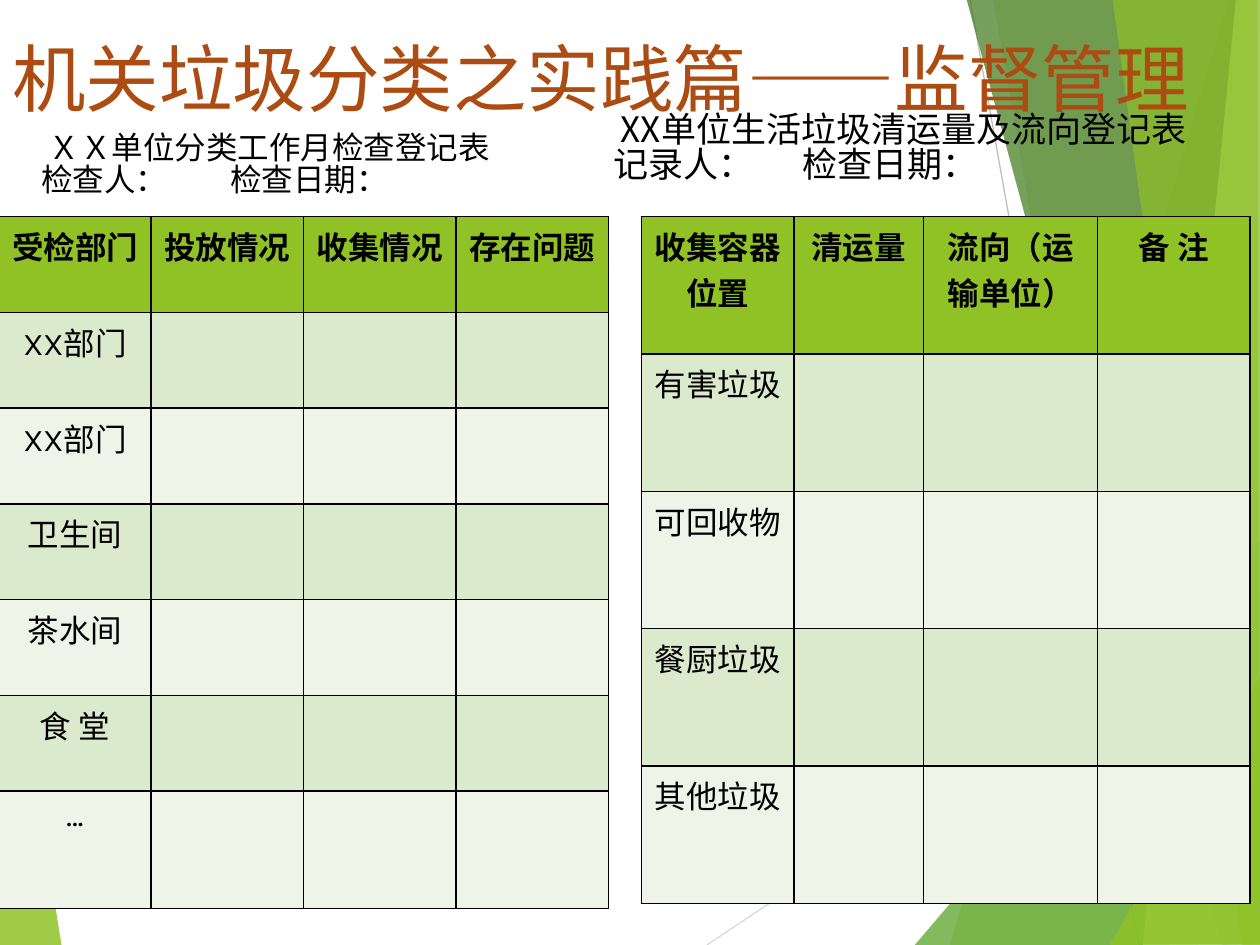
"""Build the waste-sorting supervision slide with two registration tables."""
import pptx
import pptx.dml.color
import pptx.enum.shapes
import pptx.enum.text
import pptx.oxml
import pptx.util
from lxml import etree
from pptx.util import Inches, Pt

BLACK, GREEN = "000000", "90C226"
BANDS = ["DBE9CD", "EEF4E8"]
BODY_FONT = "Noto Sans CJK SC"

LEFT_CORNER = ([(-0.01, 4.39), (0.49, 7.51), (-0.01, 7.5)], GREEN, 85)
RAYS = [
    ((5.61, 7.5), (10.01, 4.57), "D9D9D9"),
    ((7.7, 0), (9.04, 7.5), "BFBFBF"),
]
FACETS = [
    ([(9.75, 0), (7.54, 7.5), (10.02, 7.51), (10.01, 0.01)], GREEN, 30),
    ([(7.88, -0.01), (9.19, 7.5), (10.01, 7.5), (10.01, -0.01)], GREEN, 20),
    ([(7.26, 7.5), (10, 4.29), (10.01, 7.5)], "54A021", 72),
    ([(7.67, -0.01), (9.7, 7.5), (10.01, 7.49), (10.01, -0.01)], "3F7819", 70),
    ([(9.81, -0.01), (9.07, 7.5), (10.01, 7.5), (10, -0.01)], "C0E474", 70),
    ([(8.83, -0.01), (9.86, 7.5), (10, 7.5), (9.98, -0.01)], GREEN, 65),
    ([(8.81, 7.5), (10.01, 5.35), (10.01, 7.49)], GREEN, 80),
]

TITLE = "机关垃圾分类之实践篇——监督管理"
FORMS = [
    {
        "heading": ["ＸＸ单位分类工作月检查登记表", "检查人：\t检查日期："],
        "box": (0.23, 1.02, 4.75, 0.71), "size": 18, "tab": 1.56,
        "left": -0.01, "columns": [1.21] * 4, "rows": [0.76] * 6 + [0.93],
        "header": ["受检部门", "投放情况", "收集情况", "存在问题"],
        "items": ["XX部门", "XX部门", "卫生间", "茶水间", "食 堂", "…"],
    },
    {
        "heading": ["XX单位生活垃圾清运量及流向登记表", "记录人：\t检查日期："],
        "box": (4.77, 0.86, 5.23, 0.77), "size": 20, "tab": 1.61,
        "left": 5.09, "columns": [1.21, 1.03, 1.38, 1.21], "rows": [1.09] * 5,
        "header": ["收集容器位置", "清运量", "流向（运输单位）", "备 注"],
        "items": ["有害垃圾", "可回收物", "餐厨垃圾", "其他垃圾"],
    },
]
TABLE_TOP = 1.72


def color(value):
    return pptx.dml.color.RGBColor.from_string(value)


def add_element(parent, tag, **attributes):
    element = etree.SubElement(parent, pptx.oxml.ns.qn(tag))
    for name, value in attributes.items():
        element.set(name, str(value))
    return element


def add_span(para, text, size, font, fill=BLACK, bold=False):
    span = para.add_run()
    span.text = text
    span.font.size, span.font.name, span.font.bold = Pt(size), font, bold
    span.font.color.rgb = color(fill)


def add_box(slide, place):
    box = slide.shapes.add_textbox(*map(Inches, place))
    box.text_frame.word_wrap = True
    return box.text_frame.paragraphs[0]


def add_facet(slide, points, fill, opacity):
    builder = slide.shapes.build_freeform(*map(Inches, points[0]))
    builder.add_line_segments([tuple(map(Inches, point)) for point in points[1:]])
    facet = builder.convert_to_shape()
    facet.shadow.inherit = False
    facet.fill.solid()
    facet.fill.fore_color.rgb = color(fill)
    facet.line.fill.background()
    tint = facet.fill._xPr.find(".//" + pptx.oxml.ns.qn("a:srgbClr"))
    add_element(tint, "a:alpha", val=opacity * 1000)


def add_ray(slide, start, end, fill):
    ray = slide.shapes.add_connector(
        pptx.enum.shapes.MSO_CONNECTOR.STRAIGHT, *map(Inches, start + end))
    ray.line.color.rgb = color(fill)
    ray.line.width = Pt(0.75)
    add_element(ray._element.spPr, "a:effectLst")


def add_heading(slide, form):
    para = add_box(slide, form["box"])
    para.line_spacing = 0.83
    properties = para._p.get_or_add_pPr()
    properties.set("indent", str(Inches(0.06)))
    stops = add_element(properties, "a:tabLst")
    add_element(stops, "a:tab", pos=Inches(form["tab"]), algn="l")
    first, second = form["heading"]
    add_span(para, first, form["size"], BODY_FONT)
    para.add_line_break()
    add_span(para, second, form["size"], BODY_FONT)


def style_cell(cell, text, fill, bold):
    properties = cell._tc.get_or_add_tcPr()
    for side in ("a:lnL", "a:lnR", "a:lnT", "a:lnB"):
        border = add_element(properties, side, w=Pt(1))
        add_element(add_element(border, "a:solidFill"), "a:srgbClr", val=BLACK)
    cell.fill.solid()
    cell.fill.fore_color.rgb = color(fill)
    if text:
        para = cell.text_frame.paragraphs[0]
        para.alignment = pptx.enum.text.PP_ALIGN.CENTER
        add_span(para, text, 18, "Karla", bold=bold)


def add_form_table(slide, form):
    widths, heights = form["columns"], form["rows"]
    table = slide.shapes.add_table(
        len(heights), len(widths), Inches(form["left"]), Inches(TABLE_TOP),
        Inches(sum(widths)), Inches(sum(heights))).table
    for column, width in zip(table.columns, widths):
        column.width = Inches(width)
    blanks = [""] * (len(widths) - 1)
    content = [form["header"]] + [[item] + blanks for item in form["items"]]
    for index, (row, height, texts) in enumerate(zip(table.rows, heights, content)):
        row.height = Inches(height)
        fill = BANDS[(index - 1) % 2] if index else GREEN
        for cell, text in zip(row.cells, texts):
            style_cell(cell, text, fill, index == 0)


def main():
    deck = pptx.Presentation()
    deck.slide_width, deck.slide_height = Inches(10), Inches(7.5)
    slide = deck.slides.add_slide(deck.slide_layouts[6])
    add_facet(slide, *LEFT_CORNER)
    for ray in RAYS:
        add_ray(slide, *ray)
    for facet in FACETS:
        add_facet(slide, *facet)
    add_span(add_box(slide, (0, 0.21, 10, 0.81)), TITLE, 42, "Arial", "AD4C12")
    for form in FORMS:
        add_heading(slide, form)
        add_form_table(slide, form)
    deck.save("out.pptx")


if __name__ == "__main__":
    main()
